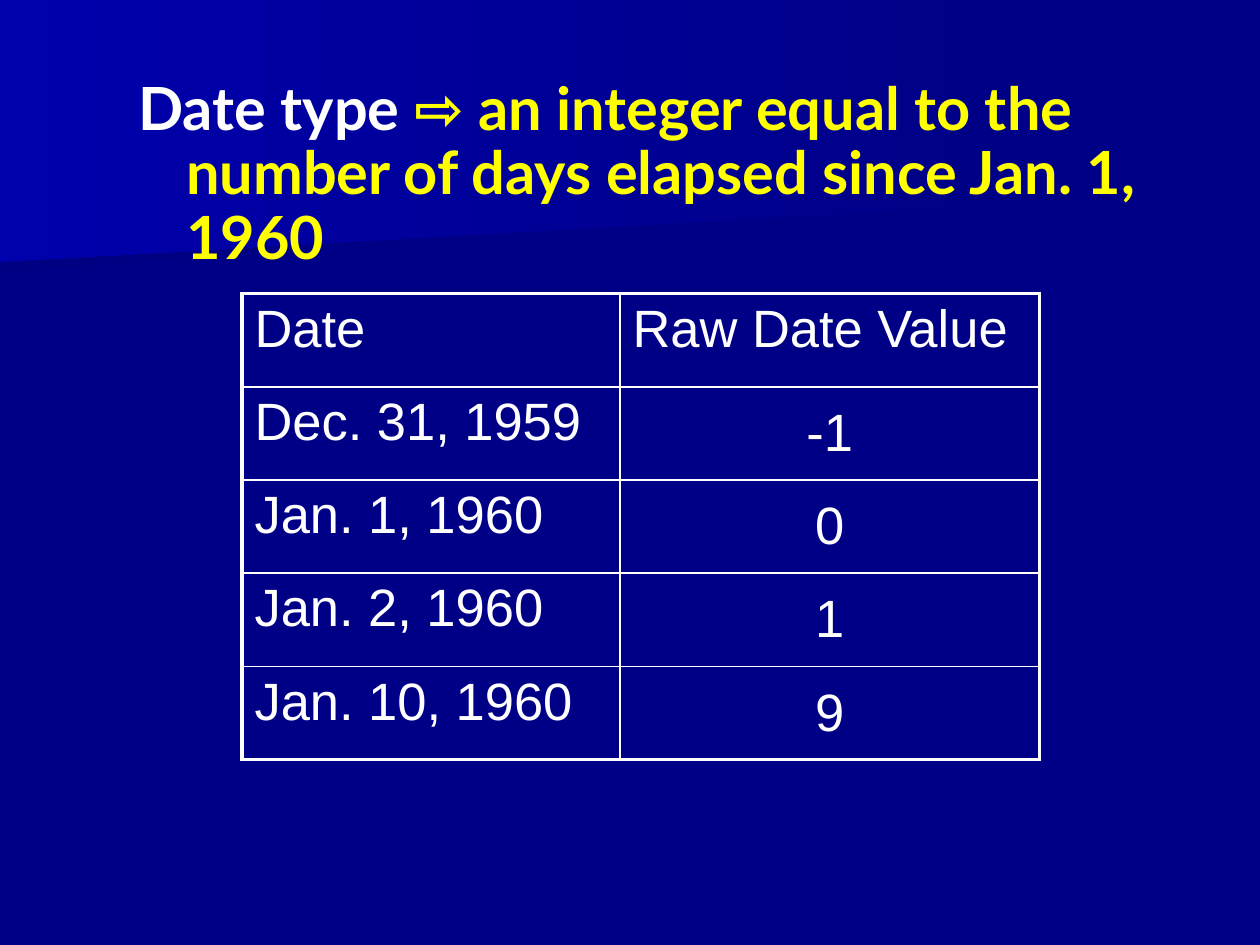
from lxml import etree
from pptx import Presentation, util as u
from pptx.dml.color import RGBColor
from pptx.enum import text
from pptx.oxml.ns import qn

# Content
HEADING = [("Date type ", "white"),
           ("⇨ an integer equal to the number of days elapsed since Jan. 1, 1960",
            "yellow")]
ROWS = [("Date", "Raw Date Value"),
        ("Dec. 31, 1959", "-1"),
        ("Jan. 1, 1960", "0"),
        ("Jan. 2, 1960", "1"),
        ("Jan. 10, 1960", "9")]

# Style and layout
COLORS = {"navy": "000086", "shade": "000083", "glow": "0000AC",
          "white": "FFFFFF", "yellow": "FFFF00"}
WIDTH, HEIGHT = 10, 7.5
COL_WIDTHS = (3, 3.33)
ROW_HEIGHT = 0.74
OUTER, INNER = 2.25, 1
# Band corners in hundredths of an inch
BANDS = [("shade", [(778, 153), (0, 217), (0, 101), (779, 101), (778, 128)]),
         ("glow", [(792, 162), (0, 208), (0, 0), (792, 0)])]


def rgb(name):
    return RGBColor.from_string(COLORS[name])


def add_band(s, color, points):
    builder = s.shapes.build_freeform(*points[0], scale=u.Inches(0.01))
    builder.add_line_segments(points[1:], close=True)
    sp = builder.convert_to_shape()
    sp.shadow.inherit = False
    sp.line.fill.background()
    sp.fill.gradient()
    sp.fill.gradient_angle = 0
    for stop, name in zip(sp.fill.gradient_stops, (color, "navy")):
        stop.color.rgb = rgb(name)


def set_borders(cell, widths):
    tcPr = cell._tc.get_or_add_tcPr()
    for side, width in widths.items():
        ln = etree.SubElement(tcPr, qn("a:ln" + side), w=str(u.Pt(width)))
        fill = etree.SubElement(ln, qn("a:solidFill"))
        etree.SubElement(fill, qn("a:srgbClr"), val=COLORS["white"])


prs = Presentation()
prs.slide_width, prs.slide_height = u.Inches(WIDTH), u.Inches(HEIGHT)
s = prs.slides.add_slide(prs.slide_layouts[6])

# Background with two fading bands
s.background.fill.solid()
s.background.fill.fore_color.rgb = rgb("navy")
for color, points in BANDS:
    add_band(s, color, points)

# Heading with a hanging indent
sp = s.shapes.add_textbox(u.Inches(1), u.Inches(0.58), u.Inches(8.25), u.Inches(1.25))
tf = sp.text_frame
tf.word_wrap = True
p = tf.paragraphs[0]
p.line_spacing = 0.9
pPr = p._p.get_or_add_pPr()
pPr.set("marL", str(u.Inches(0.38)))
pPr.set("indent", str(u.Inches(-0.38)))
p.font.name, p.font.size, p.font.bold = "Lato", u.Pt(34), True
for words, color in HEADING:
    r = p.add_run()
    r.text = words
    r.font.color.rgb = rgb(color)

# Table of dates and their values
n_rows, n_cols = len(ROWS), len(COL_WIDTHS)
table = s.shapes.add_table(n_rows, n_cols, u.Inches(1.92), u.Inches(2.33),
                           u.Inches(sum(COL_WIDTHS)),
                           u.Inches(ROW_HEIGHT * n_rows)).table
table.first_row = table.horz_banding = False
for column, width in zip(table.columns, COL_WIDTHS):
    column.width = u.Inches(width)
for i, values in enumerate(ROWS):
    table.rows[i].height = u.Inches(ROW_HEIGHT)
    for j, value in enumerate(values):
        cell = table.cell(i, j)
        edges = {"L": j == 0, "R": j == n_cols - 1, "T": i == 0, "B": i == n_rows - 1}
        set_borders(cell, {side: OUTER if edge else INNER
                           for side, edge in edges.items()})
        cell.fill.background()
        cell.text = value
        p = cell.text_frame.paragraphs[0]
        p.font.name, p.font.size = "Arial", u.Pt(30)
        p.font.color.rgb = rgb("white")
        if i and j:
            cell.vertical_anchor = text.MSO_ANCHOR.MIDDLE
            p.alignment = text.PP_ALIGN.CENTER

prs.save("out.pptx")
